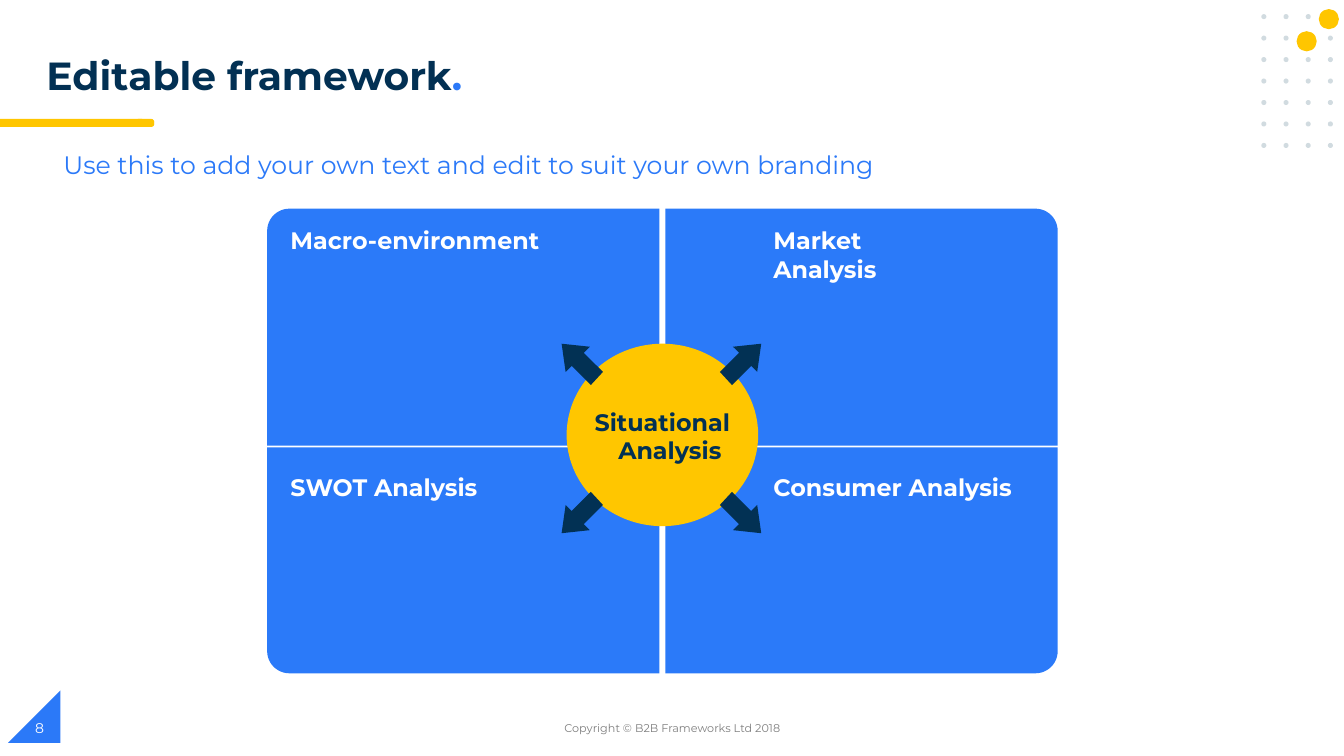
import pptx
import pptx.dml.color
import pptx.enum.shapes
import pptx.enum.text
import pptx.util

Inches, Pt = pptx.util.Inches, pptx.util.Pt
MSO = pptx.enum.shapes.MSO_SHAPE
ALIGN = pptx.enum.text.PP_ALIGN
ANCHOR = pptx.enum.text.MSO_ANCHOR
NAVY, BLUE, PANEL, YELLOW = "023154", "2B79F8", "2B7AF9", "FFC600"
GREY, DOT, WHITE = "7F7F7F", "D1DBE0", "FFFFFF"

prs = pptx.Presentation()
prs.slide_width, prs.slide_height = Inches(13.33), Inches(7.5)
s = prs.slides.add_slide(prs.slide_layouts[5])


def paint(sp, color):
    sp.shadow.inherit = False
    sp.fill.solid()
    sp.fill.fore_color.rgb = pptx.dml.color.RGBColor.from_string(color)
    sp.line.fill.background()
    return sp


def write(text, box, size, color, sp=None, bold=False, align=ALIGN.LEFT,
          anchor=ANCHOR.TOP, inset=(0.1, 0.05, 0.1, 0.05)):
    """Set text in a new text box, or add a run to the placeholder given."""
    lengths = [Inches(v) for v in box]
    sp = sp or s.shapes.add_textbox(*lengths)
    sp.left, sp.top, sp.width, sp.height = lengths
    tf = sp.text_frame
    tf.word_wrap, tf.vertical_anchor = True, anchor
    tf.margin_left, tf.margin_top, tf.margin_right, tf.margin_bottom = [
        Inches(v) for v in inset]
    p = tf.paragraphs[0]
    p.alignment = align
    r = p.add_run()
    r.text = text
    r.font.name, r.font.size, r.font.bold = "Montserrat", Pt(size), bold
    r.font.color.rgb = pptx.dml.color.RGBColor.from_string(color)
    return p


# Corner triangle behind the page number
corner = paint(s.shapes.add_shape(
    MSO.RIGHT_TRIANGLE, Inches(0.08), Inches(6.85), Inches(0.52), Inches(0.52)), BLUE)
corner._element.spPr.xfrm.set("flipH", "1")

# Accent bar under the title, two overlapping layers with rounded ends
for top in (1.18, 1.2):
    for kind, left, width in ((MSO.FLOWCHART_TERMINATOR, 1.34, 0.19),
                              (MSO.RECTANGLE, 0, 1.41)):
        paint(s.shapes.add_shape(kind, Inches(left), Inches(top),
                                 Inches(width), Inches(0.06)), YELLOW)

# Dot grid with two large dots
dots = [(12.51 + 0.22 * col, 0.14 + 0.213 * row, 0.05, DOT)
        for row in range(7) for col in range(4)]
dots += [(13.08, 0.09, 0.2, YELLOW), (12.86, 0.31, 0.2, YELLOW)]
for x, y, d, color in dots:
    paint(s.shapes.add_shape(MSO.OVAL, Inches(x), Inches(y), Inches(d), Inches(d)), color)

# Title, subtitle and footer
title_box = (0.36, 0.51, 5.64, 0.6)
for text, color in (("Editable framework", "023053"), (".", BLUE)):
    p = write(text, title_box, 28, color, sp=s.shapes.title, bold=True)
p.line_spacing = 0.9
write("Use this to add your own text and edit to suit your own branding",
      (0.53, 1.43, 8.59, 0.48), 18, BLUE)
write("Copyright © B2B Frameworks Ltd 2018", (4.42, 7.02, 4.5, 0.4), 8, GREY,
      align=ALIGN.CENTER, anchor=ANCHOR.MIDDLE)
write("8", (0.25, 7.02, 3, 0.4), 10, WHITE, anchor=ANCHOR.MIDDLE)

# Four panels, each with its outer corner rounded: left, label left, flip / top, height, label top, flip
columns = ((2.65, 2.88, "1"), (6.6, 7.67, "0"))
rows = ((2.07, 2.35, 2.23, "0"), (4.44, 2.24, 4.68, "1"))
labels = (("Macro-environment", 2.6), ("Market Analysis", 1.8),
          ("SWOT Analysis", 2.3), ("Consumer Analysis", 2.6))
cells = [(col, row) for row in rows for col in columns]
for (left, label_left, flip_h), (top, height, label_top, flip_v) in cells:
    panel = paint(s.shapes.add_shape(
        MSO.ROUND_1_RECTANGLE, Inches(left), Inches(top), Inches(3.89), Inches(height)), PANEL)
    panel.adjustments[0] = 0.22 / height
    panel._element.spPr.xfrm.set("flipH", flip_h)
    panel._element.spPr.xfrm.set("flipV", flip_v)
for ((left, label_left, _), (top, height, label_top, _)), (label, width) in zip(cells, labels):
    write(label, (label_left, label_top, width, 0.58), 17, WHITE, bold=True,
          inset=(0, 0.01, 0, 0))

# Central circle, its label wide enough for the longer word on one line
paint(s.shapes.add_shape(MSO.OVAL, Inches(5.62), Inches(3.41), Inches(1.9), Inches(1.81)), YELLOW)
p = write("Situational Analysis", (5.78, 4.03, 1.56, 0.58), 17, NAVY, bold=True,
          align=ALIGN.CENTER, inset=(0, 0.01, 0, 0))
pPr = p._p.get_or_add_pPr()
pPr.set("marL", str(Inches(0.17)))
pPr.set("indent", str(Inches(-0.15)))

# Diagonal arrows: one outline mirrored about the centre, in hundredths of an inch
cx, cy = 656, 435
arrow = ((99, -94), (71, -91), (77, -85), (58, -66), (70, -53), (89, -72), (95, -66))
outlines = [[(cx + sx * x, cy + sy * y) for x, y in arrow]
            for sx in (-1, 1) for sy in (-1, 1)]
builder = s.shapes.build_freeform(*outlines[0][0], scale=9144)
for i, outline in enumerate(outlines):
    if i:
        builder.move_to(*outline[0])
    builder.add_line_segments(outline[1:], close=True)
paint(builder.convert_to_shape(), NAVY)

prs.save("out.pptx")
